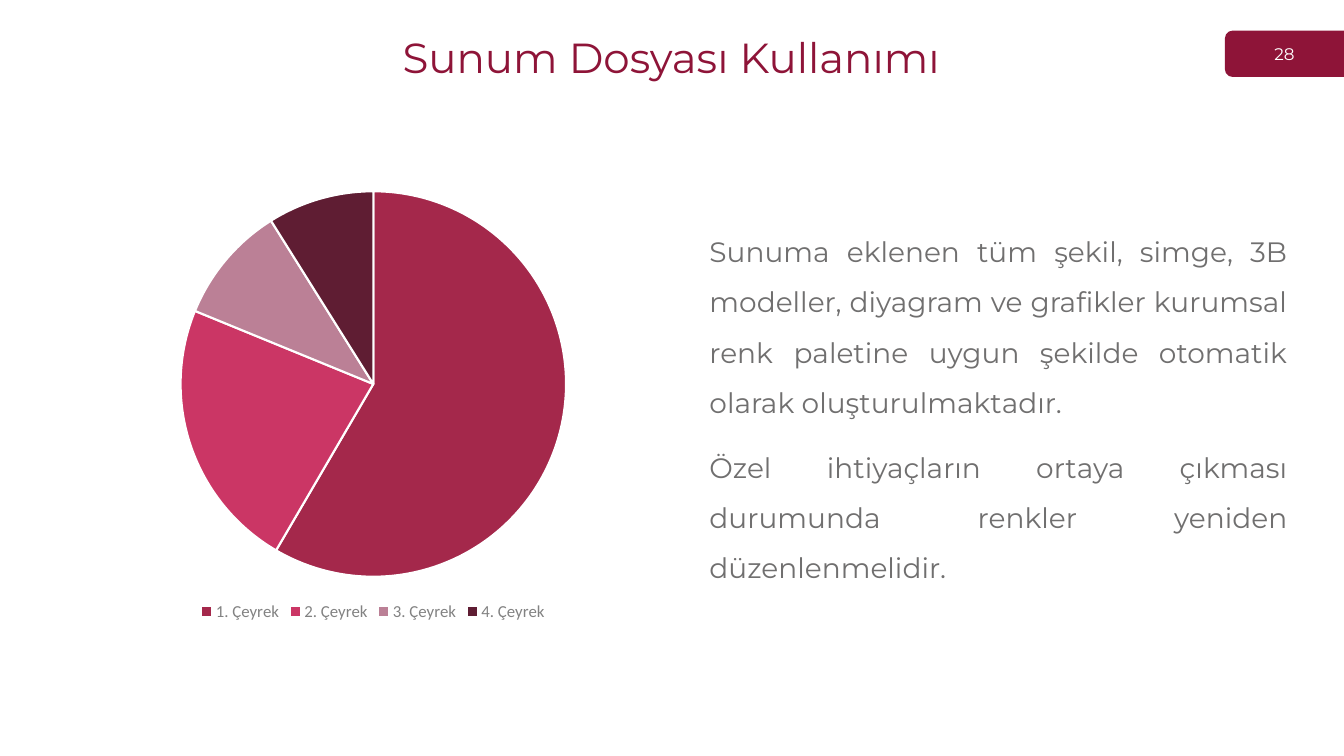
from pptx import Presentation
from pptx.chart.data import CategoryChartData
from pptx.dml.color import RGBColor
from pptx.enum import chart as ch, shapes, text
from pptx.util import Pt

BURGUNDY = "8E1438"
GREY = "706F6F"
WHITE = "FFFFFF"
QUARTERS = [
    ("1. Çeyrek", 59, "A4284B"),
    ("2. Çeyrek", 23, "CB3665"),
    ("3. Çeyrek", 10, "BB8096"),
    ("4. Çeyrek", 9, "5F1D33"),
]
BODY = [
    "Sunuma eklenen tüm şekil, simge, 3B modeller, diyagram ve grafikler "
    "kurumsal renk paletine uygun şekilde otomatik olarak oluşturulmaktadır.",
    "Özel ihtiyaçların ortaya çıkması durumunda renkler yeniden düzenlenmelidir.",
]


def rgb(value):
    return RGBColor.from_string(value)


def box(x, y, w, h):
    return Pt(x), Pt(y), Pt(w), Pt(h)


def style(font, name, size, color):
    font.name, font.size = name, Pt(size)
    font.color.rgb = rgb(color)


def add_text(s, frame, paragraphs, size, color, align, anchor, spacing=1.0):
    tf = s.shapes.add_textbox(*frame).text_frame
    tf.word_wrap = True
    tf.vertical_anchor = anchor
    for i, line in enumerate(paragraphs):
        p = tf.add_paragraph() if i else tf.paragraphs[0]
        p.text = line
        p.alignment = align
        p.line_spacing = spacing
        p.space_before = Pt(10 if i else 0)
        style(p.font, "Montserrat", size, color)


def add_page_tab(s, frame):
    """Tab with rounded left corners, turned to sit on the right edge."""
    sp = s.shapes.add_shape(shapes.MSO_SHAPE.ROUND_2_SAME_RECTANGLE, *frame)
    sp.rotation = 270
    sp.shadow.inherit = False
    sp.fill.solid()
    sp.fill.fore_color.rgb = rgb(BURGUNDY)
    sp.line.fill.background()


def add_pie(s, frame):
    data = CategoryChartData()
    data.categories = [name for name, _, _ in QUARTERS]
    data.add_series("Series 1", [value for _, value, _ in QUARTERS])
    chart = s.shapes.add_chart(ch.XL_CHART_TYPE.PIE, *frame, data).chart
    style(chart.font, "Calibri", 10, "3E3E3E")
    chart.has_title = False
    chart.has_legend = True
    chart.legend.position = ch.XL_LEGEND_POSITION.BOTTOM
    chart.legend.include_in_layout = False
    style(chart.legend.font, "Calibri", 12, "828282")
    plot = chart.plots[0]
    plot.vary_by_categories = True
    for i, (_, _, color) in enumerate(QUARTERS):
        fmt = plot.series[0].points[i].format
        fmt.fill.solid()
        fmt.fill.fore_color.rgb = rgb(color)
        fmt.line.color.rgb = rgb(WHITE)
        fmt.line.width = Pt(1.5)


def main():
    prs = Presentation()
    prs.slide_width, prs.slide_height = Pt(960), Pt(540)
    s = prs.slides.add_slide(prs.slide_layouts[6])
    center, justify = text.PP_ALIGN.CENTER, text.PP_ALIGN.JUSTIFY
    top, middle = text.MSO_ANCHOR.TOP, text.MSO_ANCHOR.MIDDLE

    add_page_tab(s, box(900.9, -4.1, 33.1, 85))
    add_text(s, box(875, 24, 85, 29), ["28"], 12, WHITE, center, middle)
    add_text(s, box(499.7, 152, 427, 270.7), BODY, 20, GREY, justify, top, 1.5)
    add_text(s, box(181.4, 14.4, 596.2, 56.2), ["Sunum Dosyası Kullanımı"],
             30, BURGUNDY, center, middle, 0.9)
    add_pie(s, box(26.6, 126.7, 480.2, 320.4))
    prs.save("out.pptx")


if __name__ == "__main__":
    main()
